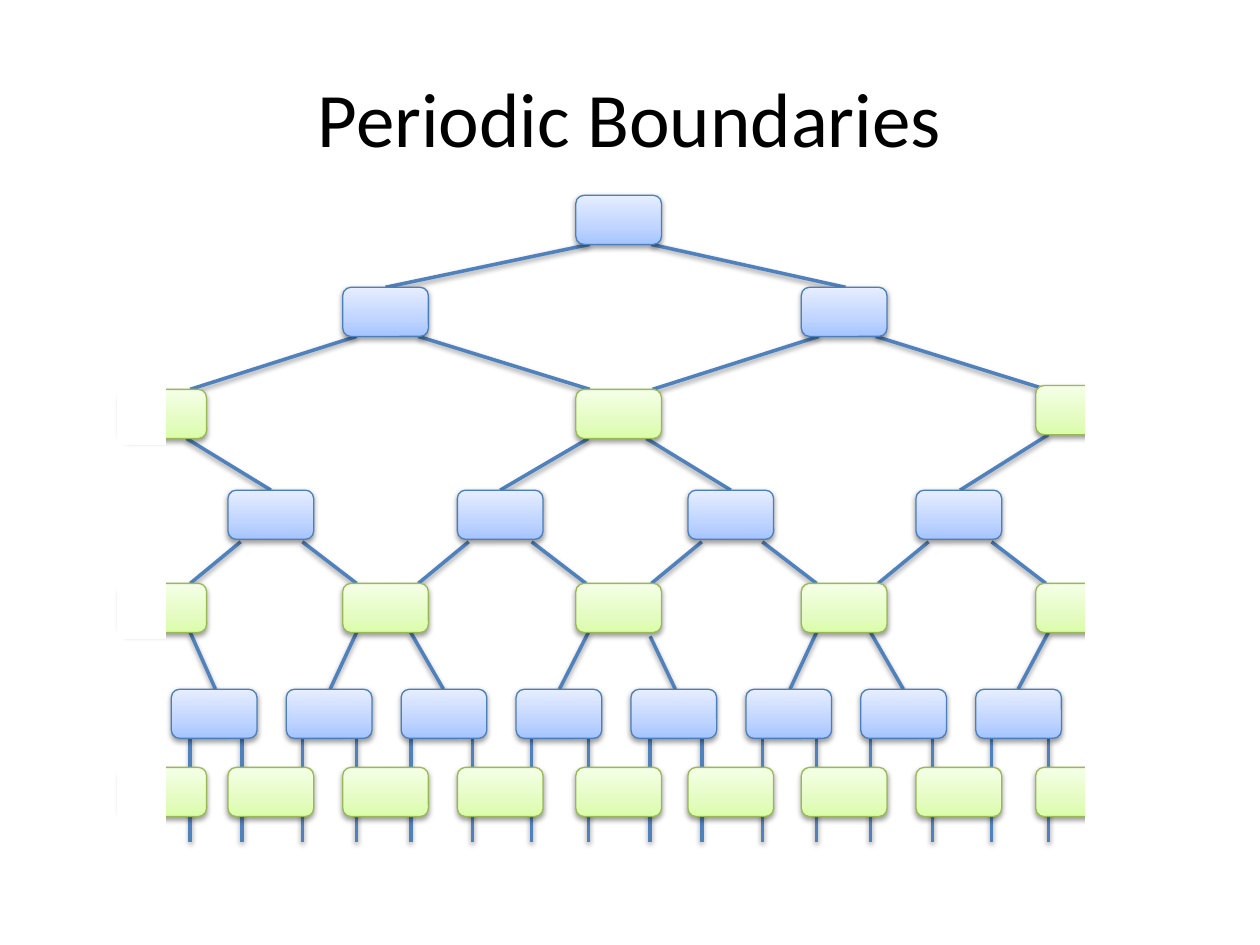
from copy import deepcopy
from dataclasses import dataclass

from pptx import Presentation
from pptx.dml.color import RGBColor
from pptx.enum.shapes import MSO_CONNECTOR as Connector, MSO_SHAPE as Shape
from pptx.oxml import parse_xml
from pptx.oxml.ns import nsdecls, qn
from pptx.util import Inches, Pt

NODE_WIDTH, NODE_HEIGHT = 0.68, 0.39
LINK_COLOR = "4F81BD"


@dataclass(frozen=True)
class NodeStyle:
    gradient: tuple[str, str, str]
    outline: str


@dataclass(frozen=True)
class NodeRow:
    top: float
    lefts: list[float]
    style: NodeStyle


@dataclass(frozen=True)
class LinkBand:
    """Links between two heights; each pair is the x at the top and at the bottom."""
    top: float
    bottom: float
    pairs: list[tuple[float, float]]


BLUE = NodeStyle(("A4C4FF", "BFD4FF", "E6EEFF"), "4B7EBC")
GREEN = NodeStyle(("DAFDA7", "E4FCC2", "F5FFE7"), "98B955")

COLUMNS = [0.96, 1.81, 2.72, 3.63, 4.57, 5.46, 6.36, 7.27, 8.22]
LEAF_LEFTS = [1.36 + 0.912 * i for i in range(8)]
STEM_XS = [1.51, 1.92, 2.4, 2.83, 3.26, 3.75, 4.22, 4.67,
           5.16, 5.57, 6.05, 6.48, 6.91, 7.4, 7.87, 8.32]

LINK_BANDS = [
    LinkBand(5.02, 5.47, [(1.51, 1.71), (2.83, 2.62), (3.26, 3.52), (4.67, 4.44),
                          (6.48, 6.27), (6.91, 7.17), (8.32, 8.08)]),
    LinkBand(5.05, 5.47, [(5.16, 5.36)]),
    LinkBand(4.3, 4.63, [(1.91, 1.51), (2.4, 2.83), (3.72, 3.32), (4.22, 4.65),
                         (5.57, 5.17), (6.05, 6.48), (7.37, 6.97), (7.87, 8.3)]),
    LinkBand(1.94, 2.28, [(4.68, 3.06), (5.17, 6.71)]),
    LinkBand(2.67, 3.09, [(2.83, 1.51), (3.32, 4.68), (6.5, 5.18), (6.95, 8.3)]),
    LinkBand(3.48, 3.89, [(1.48, 2.15), (4.67, 3.97), (5.13, 5.8)]),
    LinkBand(3.45, 3.89, [(8.32, 7.62)]),
    LinkBand(5.86, 6.68, [(x, x) for x in STEM_XS]),
]

NODE_ROWS = [
    NodeRow(5.47, LEAF_LEFTS, BLUE),
    NodeRow(6.09, COLUMNS, GREEN),
    NodeRow(4.63, COLUMNS[::2], GREEN),
    NodeRow(3.89, COLUMNS[1::2], BLUE),
    NodeRow(3.09, COLUMNS[:5:4], GREEN),
    NodeRow(3.06, COLUMNS[8:], GREEN),
    NodeRow(2.28, COLUMNS[2::4], BLUE),
    NodeRow(1.55, COLUMNS[4:5], BLUE),
]

# Left and top of the white covers that cut the nodes at the domain edges
EDGE_COVERS = [(0.93, 6.02), (8.62, 6.05), (0.93, 4.54),
               (8.62, 4.62), (0.93, 3.0), (8.62, 3.0)]


def rgb(color: str) -> RGBColor:
    return RGBColor.from_string(color)


def add_shadow(shape) -> None:
    shape._element.spPr.append(parse_xml(
        f'<a:effectLst {nsdecls("a")}>'
        f'<a:outerShdw blurRad="{Pt(3.1)}" dist="{Pt(1.6)}" dir="5400000" rotWithShape="0">'
        '<a:srgbClr val="000000"><a:alpha val="38000"/></a:srgbClr>'
        '</a:outerShdw></a:effectLst>'))


def set_line(shape, color: str, width: float) -> None:
    shape.line.color.rgb = rgb(color)
    shape.line.width = Pt(width)


def add_links(slide, band: LinkBand) -> None:
    for x_top, x_bottom in band.pairs:
        link = slide.shapes.add_connector(
            Connector.STRAIGHT, Inches(x_top), Inches(band.top),
            Inches(x_bottom), Inches(band.bottom))
        set_line(link, LINK_COLOR, 2)
        add_shadow(link)


def set_gradient(shape, colors: tuple[str, str, str]) -> None:
    shape.fill.gradient()
    shape.fill.gradient_angle = 90
    stop_list = shape._element.spPr.find(".//" + qn("a:gsLst"))
    stop_list.append(deepcopy(stop_list[-1]))
    for stop, color, position in zip(shape.fill.gradient_stops, colors, (0, 0.35, 1)):
        stop.color.rgb = rgb(color)
        stop.position = position


def add_nodes(slide, row: NodeRow) -> None:
    for left in row.lefts:
        node = slide.shapes.add_shape(
            Shape.ROUNDED_RECTANGLE, Inches(left), Inches(row.top),
            Inches(NODE_WIDTH), Inches(NODE_HEIGHT))
        set_gradient(node, row.style.gradient)
        set_line(node, row.style.outline, 0.75)
        add_shadow(node)


def add_edge_cover(slide, left: float, top: float) -> None:
    cover = slide.shapes.add_shape(
        Shape.RECTANGLE, Inches(left), Inches(top), Inches(0.38), Inches(0.53))
    cover.fill.solid()
    cover.fill.fore_color.rgb = rgb("FFFFFF")
    set_line(cover, "FFFFFF", 0.75)
    cover.shadow.inherit = False


def add_title(slide, text: str) -> None:
    title = slide.shapes.title
    title.left, title.top = Inches(0.5), Inches(0.3)
    title.width, title.height = Inches(9), Inches(1.25)
    title.text_frame.text = text
    font = title.text_frame.paragraphs[0].font
    font.name, font.size = "Calibri", Pt(44)
    font.color.rgb = rgb("000000")


def main() -> None:
    presentation = Presentation()
    presentation.slide_width, presentation.slide_height = Inches(10), Inches(7.5)
    slide = presentation.slides.add_slide(presentation.slide_layouts[5])
    add_title(slide, "Periodic Boundaries")
    for band in LINK_BANDS:
        add_links(slide, band)
    for row in NODE_ROWS:
        add_nodes(slide, row)
    for left, top in EDGE_COVERS:
        add_edge_cover(slide, left, top)
    presentation.save("out.pptx")


if __name__ == "__main__":
    main()
